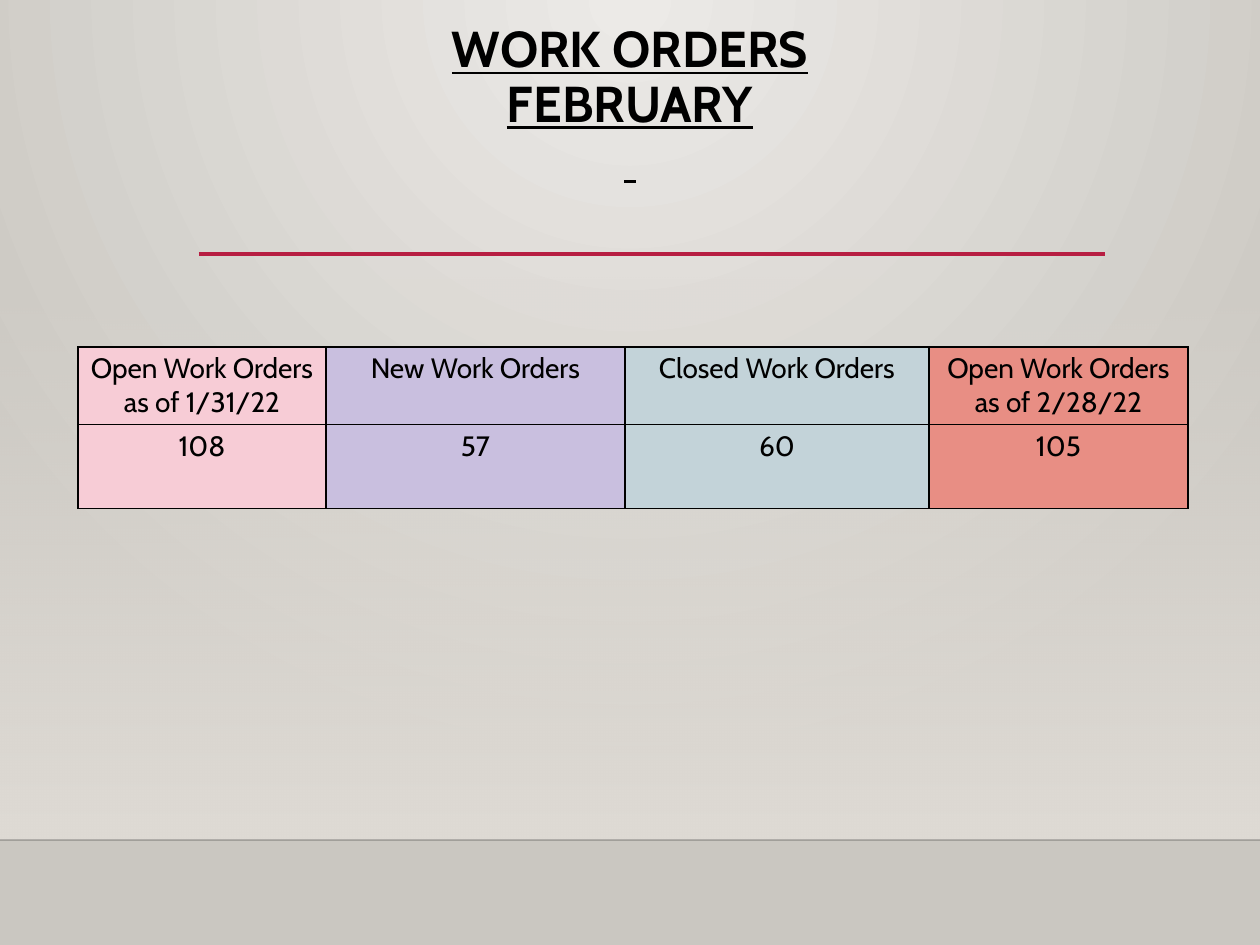
from dataclasses import dataclass

from pptx import Presentation
from pptx.dml.color import RGBColor
from pptx.enum.shapes import MSO_CONNECTOR as Connector, MSO_SHAPE as Preset
from pptx.enum.text import MSO_ANCHOR as Anchor, MSO_AUTO_SIZE as AutoSize, PP_ALIGN as Align
from pptx.oxml import parse_xml
from pptx.oxml.ns import nsdecls, qn
from pptx.util import Emu, Pt


@dataclass(frozen=True)
class Theme:
    font: str = "Cabin"
    ink: str = "000000"
    accent: str = "B71E42"
    glow: str = "ECEAE7"
    floor: str = "CAC7C1"
    wall: str = "DFDBD5"
    horizon: str = "000001"
    title_size: float = 28.8
    table_size: float = 16
    columns: tuple = ("F7CCD6", "C9BFDF", "C3D3D9", "E88E84")


THEME = Theme()
SLIDE_BOX = (0, 0, 1260, 945)
TITLE_BOX = (87, 18, 1086, 76)
TABLE_BOX = (78, 347, 1110, 161)
COLUMN_WIDTHS = (248, 299, 304, 259)
ROW_HEIGHTS = (77, 84)
WORK_ORDERS = (
    ("Open Work Orders as of 1/31/22", "New Work Orders",
     "Closed Work Orders", "Open Work Orders as of 2/28/22"),
    ("108", "57", "60", "105"),
)


def px(length):
    return Emu(round(length * 914400 / 126))


def write_text(frame, text, size, bold=False, underline=False, spacing=1.0):
    frame.word_wrap = True
    frame.vertical_anchor = Anchor.TOP
    paragraph = frame.paragraphs[0]
    paragraph.text = text
    paragraph.alignment = Align.CENTER
    paragraph.line_spacing = spacing
    for run in paragraph.runs:
        font = run.font
        font.name = THEME.font
        font.size = Pt(size)
        font.bold = bold
        font.underline = underline
        font.color.rgb = RGBColor.from_string(THEME.ink)


def apply_gradient(fill, parent, stops, direction):
    fill.solid()
    stop_xml = "".join(
        f'<a:gs pos="{position * 1000}"><a:srgbClr val="{color}">'
        f'<a:alpha val="{alpha * 1000}"/></a:srgbClr></a:gs>'
        for position, color, alpha in stops
    )
    gradient = parse_xml(
        f'<a:gradFill {nsdecls("a")} rotWithShape="1">'
        f"<a:gsLst>{stop_xml}</a:gsLst>{direction}</a:gradFill>"
    )
    solid = parent.find(qn("a:solidFill"))
    parent.replace(solid, gradient)


def add_rule(slide, left, top, width, color, weight, opacity=100):
    rule = slide.shapes.add_connector(
        Connector.STRAIGHT, px(left), px(top), px(left + width), px(top)
    )
    rule.line.width = Pt(weight)
    rule.line.color.rgb = RGBColor.from_string(color)
    properties = rule._element.spPr
    if opacity < 100:
        color_element = properties.find(".//" + qn("a:srgbClr"))
        color_element.append(
            parse_xml(f'<a:alpha {nsdecls("a")} val="{opacity * 1000}"/>')
        )
    properties.append(parse_xml(f'<a:effectLst {nsdecls("a")}/>'))


def draw_backdrop(slide, box):
    left, top, width, height = box
    background = slide.background.fill
    background.solid()
    apply_gradient(
        background,
        slide._element.find(".//" + qn("p:bgPr")),
        ((0, THEME.glow, 100), (100, THEME.floor, 100)),
        '<a:path path="circle">'
        '<a:fillToRect l="43000" t="0" r="43000" b="100000"/></a:path>',
    )
    wall_top, horizon = top + 277, top + height - 105
    wall = slide.shapes.add_shape(
        Preset.RECTANGLE, px(left), px(wall_top), px(width), px(horizon - wall_top)
    )
    wall.shadow.inherit = False
    wall.line.fill.background()
    apply_gradient(
        wall.fill,
        wall._element.spPr,
        ((0, THEME.wall, 0), (100, THEME.wall, 100)),
        '<a:lin ang="5400000" scaled="0"/>',
    )
    add_rule(slide, left, horizon, width, THEME.horizon, 1, opacity=20)
    add_rule(slide, left + 199, top + 254, 906, THEME.accent, 2.5)


def place_title(slide, box):
    title = slide.shapes.title
    title.left, title.top, title.width, title.height = map(px, box)
    title.text_frame.auto_size = AutoSize.NONE
    write_text(title.text_frame, "WORK ORDERS\vFEBRUARY\v ", THEME.title_size,
               bold=True, underline=True, spacing=0.9)
    title._element.getparent().append(title._element)


def outline_cell(cell):
    properties = cell._tc.get_or_add_tcPr()
    for index, side in enumerate(("lnL", "lnR", "lnT", "lnB")):
        properties.insert(index, parse_xml(
            f'<a:{side} {nsdecls("a")} w="{Pt(1)}"><a:solidFill>'
            f'<a:srgbClr val="{THEME.ink}"/></a:solidFill></a:{side}>'
        ))


def add_work_order_table(slide, box):
    table = slide.shapes.add_table(
        len(ROW_HEIGHTS), len(COLUMN_WIDTHS), *map(px, box)
    ).table
    table.first_row = False
    table.horz_banding = False
    for column, width in zip(table.columns, COLUMN_WIDTHS):
        column.width = px(width)
    for row, height, texts in zip(table.rows, ROW_HEIGHTS, WORK_ORDERS):
        row.height = px(height)
        for cell, text, color in zip(row.cells, texts, THEME.columns):
            cell.margin_left = cell.margin_right = px(9)
            cell.margin_top = cell.margin_bottom = px(5)
            cell.fill.solid()
            cell.fill.fore_color.rgb = RGBColor.from_string(color)
            outline_cell(cell)
            write_text(cell.text_frame, text, THEME.table_size)


def main():
    presentation = Presentation()
    presentation.slide_width, presentation.slide_height = map(px, SLIDE_BOX[2:])
    slide = presentation.slides.add_slide(presentation.slide_layouts[5])
    draw_backdrop(slide, SLIDE_BOX)
    place_title(slide, TITLE_BOX)
    add_work_order_table(slide, TABLE_BOX)
    presentation.save("out.pptx")


if __name__ == "__main__":
    main()
